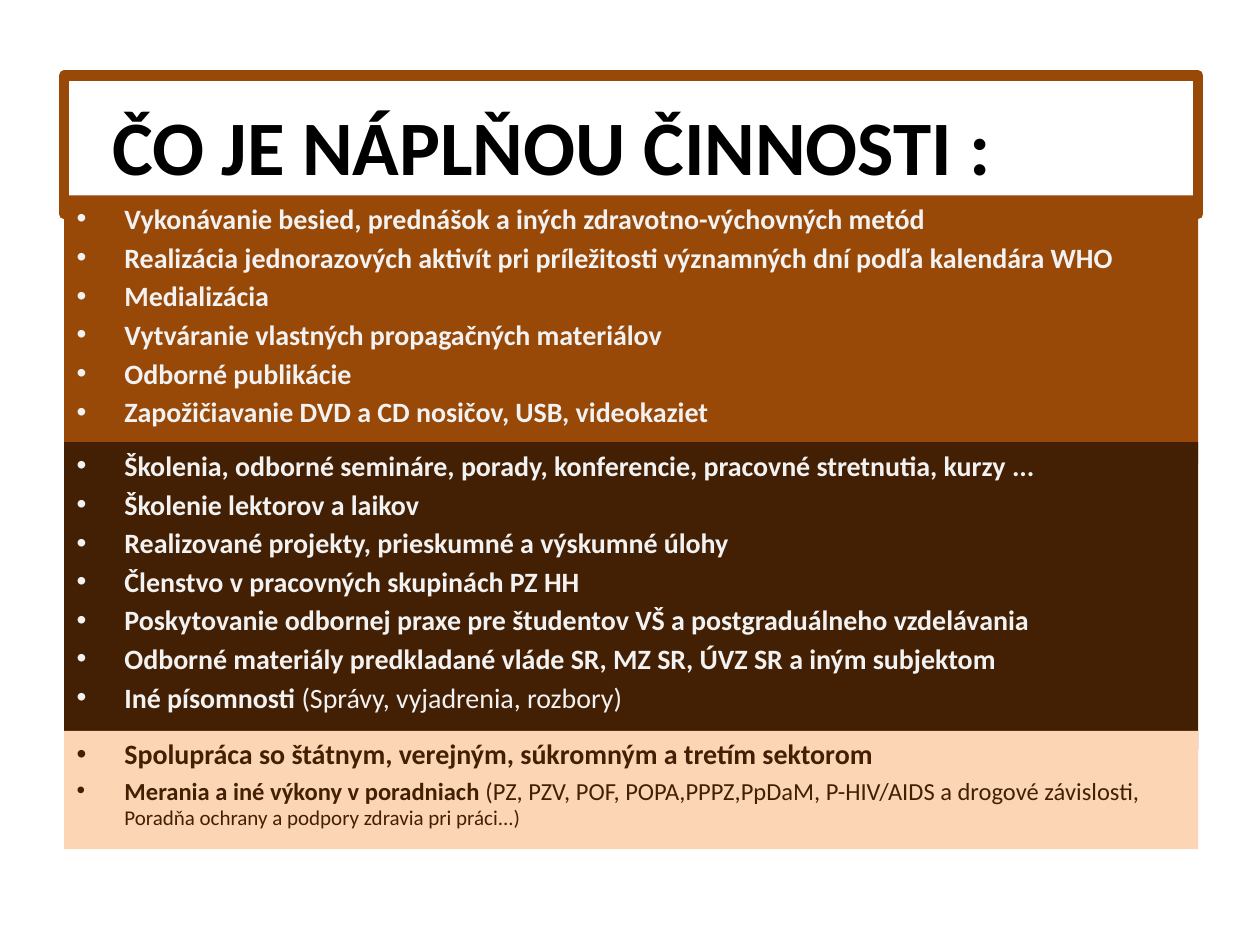
import pptx
import pptx.util
import pptx.dml.color
import pptx.enum.shapes
import pptx.enum.text
import lxml.etree
from pptx.util import Inches

FONT = "Calibri"
COLORS = {
    "black": "000000",
    "brown": "984807",
    "dark": "432003",
    "peach": "FCD5B5",
    "light": "F2F2F2",
}
LEFT, WIDTH = 0.51, 9
INDENT = Inches(0.38)

# Each item is a list of runs: (text, size, bold)
EDUCATION = [[(text, 16, True)] for text in (
    "Vykonávanie besied, prednášok a iných zdravotno-výchovných metód",
    "Realizácia jednorazových aktivít pri príležitosti významných dní podľa kalendára WHO",
    "Medializácia",
    "Vytváranie vlastných propagačných materiálov",
    "Odborné publikácie",
    "Zapožičiavanie DVD a CD nosičov, USB, videokaziet",
)]
EXPERTISE = [[(text, 16, True)] for text in (
    "Školenia, odborné semináre, porady, konferencie, pracovné stretnutia, kurzy ...",
    "Školenie lektorov a laikov",
    "Realizované projekty, prieskumné a výskumné úlohy",
    "Členstvo v pracovných skupinách PZ HH",
    "Poskytovanie odbornej praxe pre študentov VŠ a postgraduálneho vzdelávania",
    "Odborné materiály predkladané vláde SR, MZ SR, ÚVZ SR a iným subjektom",
)] + [[("Iné písomnosti ", 16, True), ("(Správy, vyjadrenia, rozbory)", 16, False)]]
COOPERATION = [
    [("Spolupráca so štátnym, verejným, súkromným a tretím sektorom", 16, True)],
    [("Merania a iné výkony v poradniach ", 14, True),
     ("(PZ, PZV, POF, POPA,PPPZ,PpDaM, P-HIV/AIDS a drogové závislosti, ", 14, False),
     ("Poradňa ochrany a podpory zdravia pri práci...)", 12, False)],
]

# Top, height, fill, text colour, items
BANDS = [
    (1.55, 2.13, "brown", "light", EDUCATION),
    (3.51, 2.44, "dark", "light", EXPERTISE),
    (5.8, 0.94, "peach", "dark", COOPERATION),
]


def rgb(name):
    return pptx.dml.color.RGBColor.from_string(COLORS[name])


def add_run(p, text, size, bold, color):
    r = p.add_run()
    r.text = text
    r.font.name = FONT
    r.font.size = pptx.util.Pt(size)
    r.font.bold = bold
    r.font.color.rgb = rgb(color)


def add_bullet(p):
    pPr = p._p.get_or_add_pPr()
    pPr.set("marL", str(INDENT))
    pPr.set("indent", str(-INDENT))
    for tag, attr, value in (("buFont", "typeface", "Arial"), ("buChar", "char", "•")):
        lxml.etree.SubElement(pPr, pptx.oxml.ns.qn("a:" + tag)).set(attr, value)


def place_title(sp, left, top, width, height):
    sp.left, sp.top, sp.width, sp.height = map(Inches, (left, top, width, height))
    sp.line.color.rgb = rgb("brown")
    sp.line.width = pptx.util.Pt(6)
    lxml.etree.SubElement(sp.line._get_or_add_ln(), pptx.oxml.ns.qn("a:round"))
    tf = sp.text_frame
    tf.auto_size = pptx.enum.text.MSO_AUTO_SIZE.NONE
    tf.vertical_anchor = pptx.enum.text.MSO_ANCHOR.MIDDLE
    tf.margin_left = INDENT
    p = tf.paragraphs[0]
    p.alignment = pptx.enum.text.PP_ALIGN.LEFT
    add_run(p, "ČO JE NÁPLŇOU ČINNOSTI :", 44, True, "black")


def add_band(s, left, top, width, height, fill, color, items):
    sp = s.shapes.add_shape(pptx.enum.shapes.MSO_SHAPE.RECTANGLE,
                            *map(Inches, (left, top, width, height)))
    sp.shadow.inherit = False
    sp.fill.solid()
    sp.fill.fore_color.rgb = rgb(fill)
    sp.line.fill.background()
    tf = sp.text_frame
    tf.word_wrap = True
    tf.vertical_anchor = pptx.enum.text.MSO_ANCHOR.TOP
    for i, runs in enumerate(items):
        p = tf.add_paragraph() if i else tf.paragraphs[0]
        p.alignment = pptx.enum.text.PP_ALIGN.LEFT
        p.space_before = pptx.util.Pt(2.9)
        add_bullet(p)
        for text, size, bold in runs:
            add_run(p, text, size, bold, color)


def main():
    prs = pptx.Presentation()
    prs.slide_width, prs.slide_height = Inches(10), Inches(7.5)
    s = prs.slides.add_slide(prs.slide_layouts[5])

    # Framed heading
    place_title(s.shapes.title, LEFT, 0.6, WIDTH, 1.1)

    # Coloured bands, each overlapping the one above
    for top, height, fill, color, items in BANDS:
        add_band(s, LEFT, top, WIDTH, height, fill, color, items)

    prs.save("out.pptx")


if __name__ == "__main__":
    main()
